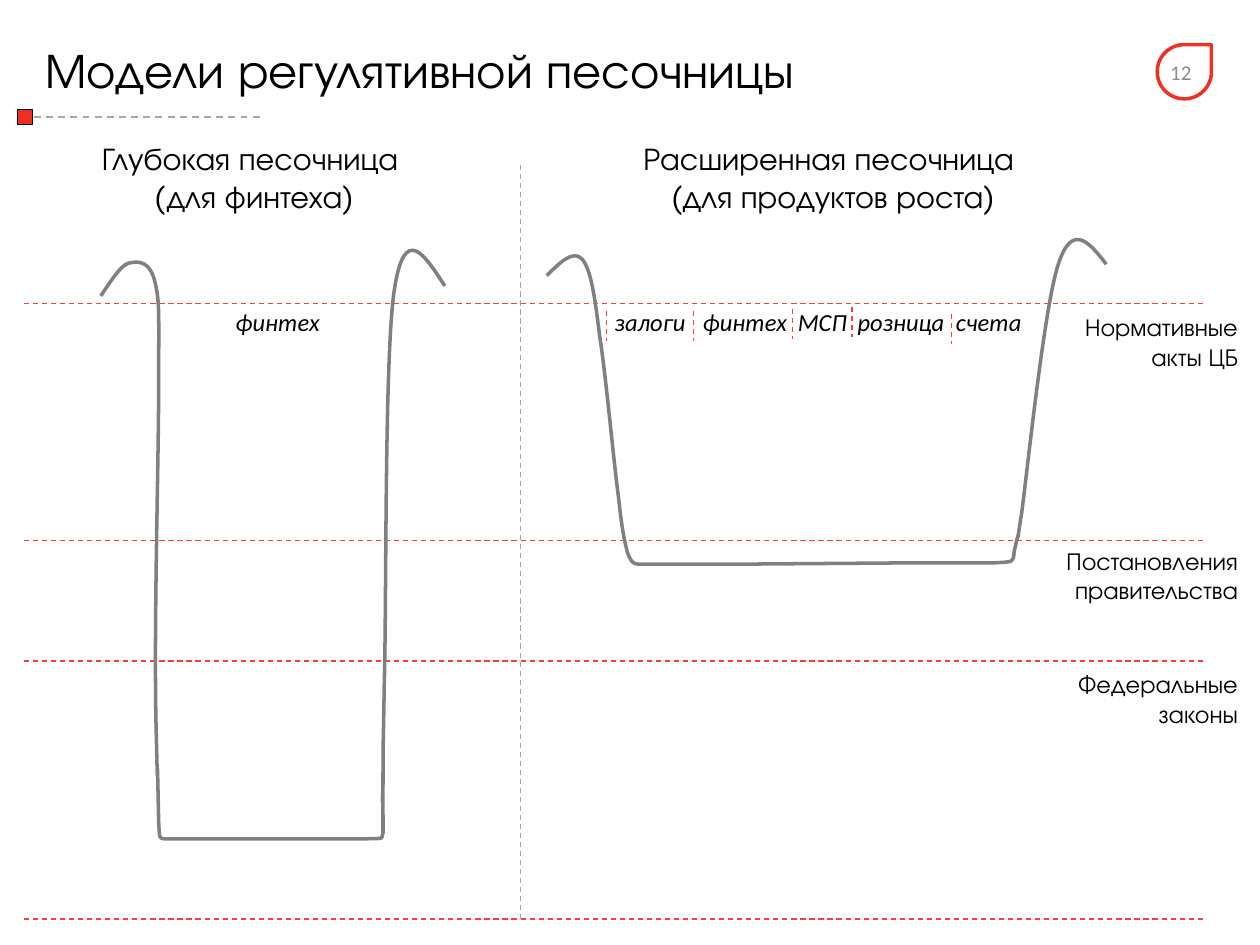
from pptx import Presentation
from pptx import util as u
from pptx.dml.color import RGBColor
from pptx.enum import dml, shapes, text
from pptx.oxml.ns import qn
from lxml import etree

BLACK = RGBColor(0x00, 0x00, 0x00)
RED = RGBColor(0xEF, 0x2F, 0x22)
BADGE_RED = RGBColor(0xEF, 0x31, 0x24)
LEVEL_RED = RGBColor(0xFF, 0x3C, 0x3C)
WALL_GRAY = RGBColor(0x80, 0x80, 0x80)
RULE_GRAY = RGBColor(0xA6, 0xA6, 0xA6)
NUMBER_GRAY = RGBColor(0x8C, 0x8C, 0x8C)

HEADING = {"name": "TeX Gyre Adventor"}
LABEL = {"name": "Calibri", "size": u.Pt(14), "italic": True}
LEFT, CENTER, RIGHT = text.PP_ALIGN.LEFT, text.PP_ALIGN.CENTER, text.PP_ALIGN.RIGHT

DEEP_PIT = [
    (0, 25.9),
    (3.6, 20.9, 10.8, 8.6, 15.8, 7.2),
    (21.6, 5.8, 28.1, 5.8, 31, 18),
    (33.8, 29.5, 33.1, 36, 33.1, 78.5),
    (33.1, 121.7, 30.2, 215.3, 31.7, 275),
    (33.1, 335.5, 31.7, 257.8, 33.1, 326.2),
    (33.8, 337, 32.4, 336.2, 41, 336.2),
    (83.5, 336.2),
    (150.5, 336.2),
    (163.4, 335.5, 159.8, 337, 161.3, 332.6),
    (161.3, 282.2, 160.6, 335.5, 161.3, 304.6),
    (161.3, 273.6, 161.3, 294.5, 162, 247.7),
    (163.4, 200.1, 162, 59.7, 167.8, 22.3),
    (173.5, -15.8, 185, 2.2, 196.6, 20.2),
]
WIDE_PIT = [
    (0, 20.9),
    (7.2, 13.7, 15.1, 5.8, 20.2, 11.5),
    (25.2, 17.3, 27.4, 32.4, 30.2, 55.4),
    (33.8, 77.8, 38.2, 127.4, 41, 147.6),
    (43.2, 168.5, 44.6, 172.8, 46.1, 179.3),
    (49, 185.8, 49, 185.8, 56.2, 185.8),
    (105.1, 185.8),
    (212.4, 185),
    (256.3, 185),
    (267.1, 184.3, 266.4, 185, 267.1, 178.6),
    (271.4, 158.4, 267.1, 183.6, 271.4, 156.2),
    (275, 128.9, 284.4, 38.2, 292.3, 14.4),
    (300.2, -10.1, 310.3, 2.2, 319.7, 14.4),
]


def add_text(s, box, lines, font, align=LEFT, anchor=text.MSO_ANCHOR.TOP, color=BLACK, tabs=()):
    """Add a wrapped text box with one paragraph per line."""
    tf = s.shapes.add_textbox(*map(u.Pt, box)).text_frame
    tf.word_wrap, tf.vertical_anchor = True, anchor
    for i, line in enumerate(lines):
        p = tf.add_paragraph() if i else tf.paragraphs[0]
        p.alignment = align
        if tabs:
            stops = etree.SubElement(p._p.get_or_add_pPr(), qn("a:tabLst"))
            for stop in tabs:
                etree.SubElement(stops, qn("a:tab"), pos=str(u.Pt(stop)), algn="l")
        r = p.add_run()
        r.text = line
        for key, value in font.items():
            setattr(r.font, key, value)
        r.font.color.rgb = color


def add_dashes(s, x1, y1, x2, y2, color, width=0.75):
    """Add a straight dashed line."""
    sp = s.shapes.add_connector(shapes.MSO_CONNECTOR.STRAIGHT, *map(u.Pt, (x1, y1, x2, y2)))
    sp.line.color.rgb, sp.line.width = color, u.Pt(width)
    sp.line.dash_style = dml.MSO_LINE.DASH
    etree.SubElement(sp._element.spPr, qn("a:effectLst"))


def add_mark(s, kind, box, line, width, fill=None):
    """Add a small outlined preset shape."""
    sp = s.shapes.add_shape(kind, *map(u.Pt, box))
    sp.shadow.inherit = False
    if fill is None:
        sp.fill.background()
    else:
        sp.fill.solid()
        sp.fill.fore_color.rgb = fill
    sp.line.color.rgb, sp.line.width = line, u.Pt(width)


def add_pit(s, box, segments):
    """Draw the open curved outline of a sandbox in a box."""
    x, y, w, h = map(u.Pt, box)
    builder = s.shapes.build_freeform(x, y)
    builder.add_line_segments([(x + w, y + h)], close=False)
    sp = builder.convert_to_shape()
    outline = next(sp._element.iter(qn("a:path")))
    for child in list(outline):
        outline.remove(child)
    for i, seg in enumerate(segments):
        tag = "a:moveTo" if i == 0 else "a:lnTo" if len(seg) == 2 else "a:cubicBezTo"
        step = etree.SubElement(outline, qn(tag))
        for px, py in zip(seg[::2], seg[1::2]):
            etree.SubElement(step, qn("a:pt"), x=str(u.Pt(px)), y=str(u.Pt(py)))
    sp.shadow.inherit = False
    sp.fill.background()
    sp.line.color.rgb, sp.line.width = WALL_GRAY, u.Pt(2)


def add_header(s, x, y):
    """Place the title, its rule and the page badge."""
    middle = text.MSO_ANCHOR.MIDDLE
    add_text(s, (x + 8.7, y, 607.7, 55.4), ["Модели регулятивной песочницы"],
             {**HEADING, "size": u.Pt(28)}, anchor=middle)
    add_dashes(s, x + 9.3, y + 55.4, x + 140.4, y + 55.4, RULE_GRAY, 1)
    add_mark(s, shapes.MSO_SHAPE.RECTANGLE, (x, y + 51.1, 8.6, 8.6), BLACK, 0.75, RED)
    add_mark(s, shapes.MSO_SHAPE.TEAR, (x + 651.2, y + 14, 31, 31), BADGE_RED, 2)
    add_text(s, (x + 644.7, y + 15.1, 33.1, 28.8), ["12"],
             {"name": "Calibri", "size": u.Pt(12)}, RIGHT, middle, NUMBER_GRAY)


def add_levels(s, x, right):
    """Place the level lines and the legal acts named under them."""
    for y in (173.5, 308.9, 377.8, 525.1):
        add_dashes(s, x, y, right, y, LEVEL_RED)
    acts = ((175, "Нормативные акты ЦБ", 118.8),
            (308.2, "Постановления правительства", 133.2),
            (378.9, "Федеральные законы", 133.2))
    for y, name, width in acts:
        add_text(s, (714.5 - width, y, width, 41), [name], {**HEADING, "size": u.Pt(14)}, RIGHT)


def add_deep_sandbox(s, x, y):
    """Place the deep sandbox with its heading and product."""
    add_text(s, (x, y, 262.1, 51.1), ["Глубокая песочница ", "(для финтеха)"],
             {**HEADING, "size": u.Pt(18)}, CENTER)
    add_pit(s, (x + 43.2, y + 67.2, 196.6, 337), DEEP_PIT)
    add_text(s, (x + 113, y + 96.1, 67.7, 24.5), ["финтех"], LABEL)


def add_wide_sandbox(s, x, y):
    """Place the wide sandbox with its heading and divided products."""
    add_text(s, (x + 19.3, y, 283.7, 51.1), ["Расширенная песочница", " (для продуктов роста)"],
             {**HEADING, "size": u.Pt(18)}, CENTER)
    add_pit(s, (x, y + 60.6, 319.7, 185.8), WIDE_PIT)
    add_text(s, (x + 31.7, y + 96.1, 299.5, 24.5), ["залоги\tфинтех\tМСП\tрозница\tсчета"],
             LABEL, tabs=(50.2, 104.6, 138.8, 195))
    for dx, dy in ((34, 101.8), (83.7, 101.8), (140.4, 100.4), (174.4, 99.5), (231.1, 103.2)):
        add_dashes(s, x + dx, y + dy, x + dx, y + dy + 17.2, LEVEL_RED)


def main():
    """Build the slide and save it."""
    prs = Presentation()
    prs.slide_width, prs.slide_height = u.Pt(720), u.Pt(540)
    s = prs.slides.add_slide(prs.slide_layouts[6])
    add_header(s, 10.1, 11.5)
    add_dashes(s, 297.4, 94.3, 297.4, 524.9, RULE_GRAY)
    add_levels(s, 13.7, 688.3)
    add_deep_sandbox(s, 14.4, 76)
    add_wide_sandbox(s, 312.5, 76)
    prs.save("out.pptx")


if __name__ == "__main__":
    main()
